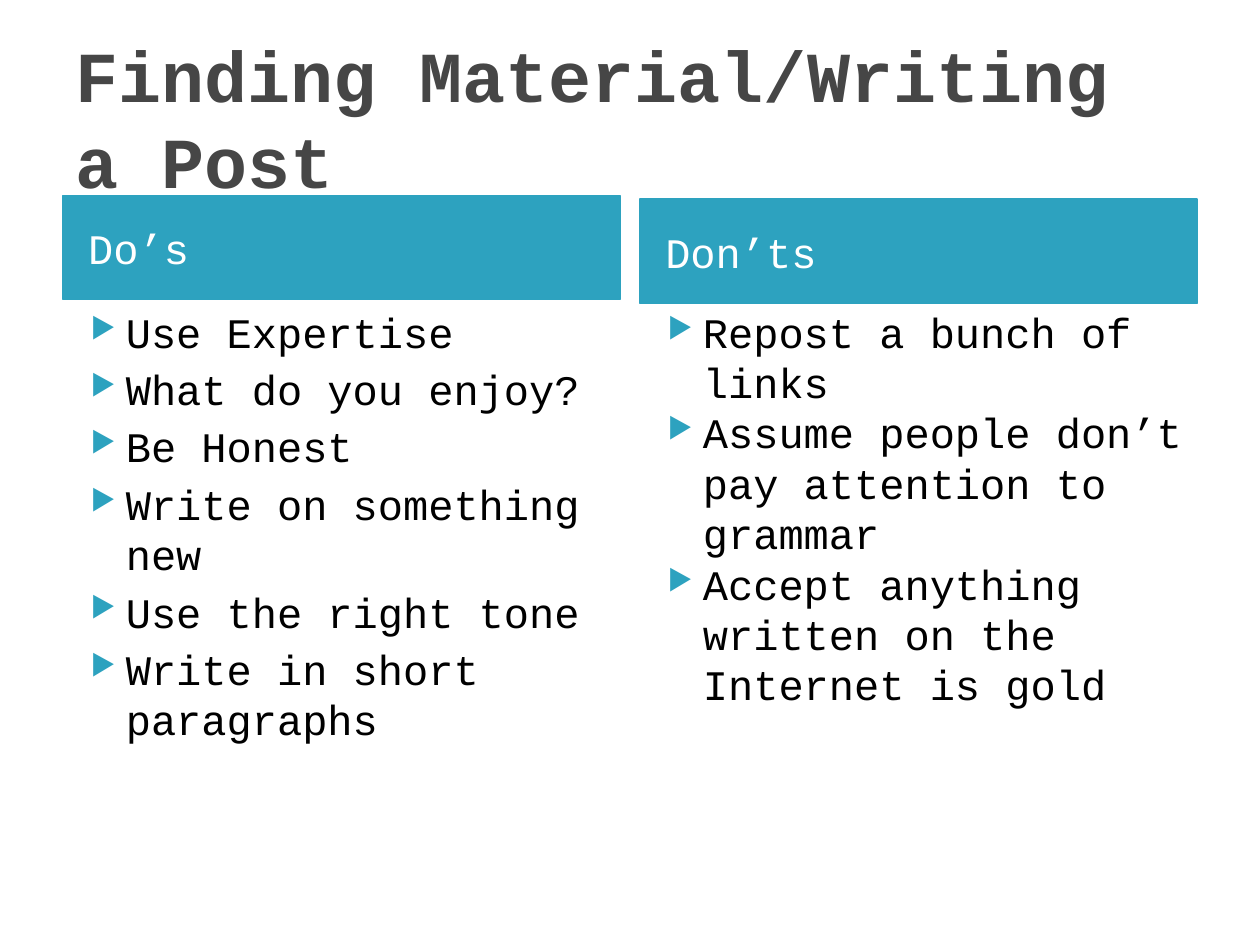
from lxml import etree
from pptx import Presentation
from pptx.dml.color import RGBColor
from pptx.enum.shapes import MSO_SHAPE
from pptx.enum.text import MSO_ANCHOR, PP_ALIGN
from pptx.oxml.ns import qn
from pptx.util import Inches, Pt

RECTANGLE = MSO_SHAPE.RECTANGLE
MIDDLE = MSO_ANCHOR.MIDDLE
LEFT = PP_ALIGN.LEFT

FONT = "Courier New"
TEAL = "2DA2BF"
GRAY = "464646"
WHITE = "FFFFFF"
BLACK = "000000"

MARGIN = 0.5
COLUMN_WIDTH = 4.42
COLUMN_STEP = 4.58
HEADER_HEIGHT = 0.83
LIST_TOP = 2.38
LIST_HEIGHT = 4.31

COLUMNS = [
    ("Do’s", 1.55, 4, [
        "Use Expertise",
        "What do you enjoy?",
        "Be Honest",
        "Write on something new",
        "Use the right tone",
        "Write in short paragraphs",
    ]),
    ("Don’ts", 1.58, 0, [
        "Repost a bunch of links",
        "Assume people don’t pay attention to grammar",
        "Accept anything written on the Internet is gold",
    ]),
]


def color(value):
    return RGBColor.from_string(value)


def write(paragraph, text, size, text_color, bold=False):
    paragraph.text = text
    paragraph.alignment = LEFT
    for run in paragraph.runs:
        run.font.name = FONT
        run.font.size = Pt(size)
        run.font.bold = bold
        run.font.color.rgb = color(text_color)


def add_bullet(paragraph):
    properties = paragraph._p.get_or_add_pPr()
    properties.set("marL", str(Inches(0.4)))
    properties.set("indent", str(Inches(-0.28)))
    bullet_color = etree.SubElement(properties, qn("a:buClr"))
    etree.SubElement(bullet_color, qn("a:srgbClr"), val=TEAL)
    etree.SubElement(properties, qn("a:buSzPct"), val="68000")
    etree.SubElement(properties, qn("a:buChar"), char="▶")


def add_title(slide, box, text):
    text_frame = slide.shapes.add_textbox(*map(Inches, box)).text_frame
    text_frame.word_wrap = True
    text_frame.vertical_anchor = MIDDLE
    write(text_frame.paragraphs[0], text, 41, GRAY, bold=True)


def add_header(slide, box, text):
    shape = slide.shapes.add_shape(RECTANGLE, *map(Inches, box))
    shape.shadow.inherit = False
    shape.fill.solid()
    shape.fill.fore_color.rgb = color(TEAL)
    shape.line.color.rgb = color(TEAL)
    shape.line.width = Pt(0.75)
    text_frame = shape.text_frame
    text_frame.word_wrap = True
    text_frame.vertical_anchor = MIDDLE
    text_frame.margin_left = Inches(0.2)
    write(text_frame.paragraphs[0], text, 24, WHITE)


def add_bullet_list(slide, box, items, space_before):
    text_frame = slide.shapes.add_textbox(*map(Inches, box)).text_frame
    text_frame.word_wrap = True
    for index, item in enumerate(items):
        paragraph = text_frame.add_paragraph() if index else text_frame.paragraphs[0]
        add_bullet(paragraph)
        write(paragraph, item, 24, BLACK)
        paragraph.space_before = Pt(space_before if index else 0)


def main():
    presentation = Presentation()
    presentation.slide_width = Inches(10)
    presentation.slide_height = Inches(7.5)
    slide = presentation.slides.add_slide(presentation.slide_layouts[6])
    add_title(slide, (MARGIN, 0.3, 9, 1.25), "Finding Material/Writing a Post")
    for index, (heading, header_top, space_before, items) in enumerate(COLUMNS):
        left = MARGIN + index * COLUMN_STEP
        add_header(slide, (left, header_top, COLUMN_WIDTH, HEADER_HEIGHT), heading)
        add_bullet_list(slide, (left, LIST_TOP, COLUMN_WIDTH, LIST_HEIGHT), items, space_before)
    presentation.save("out.pptx")


if __name__ == "__main__":
    main()
